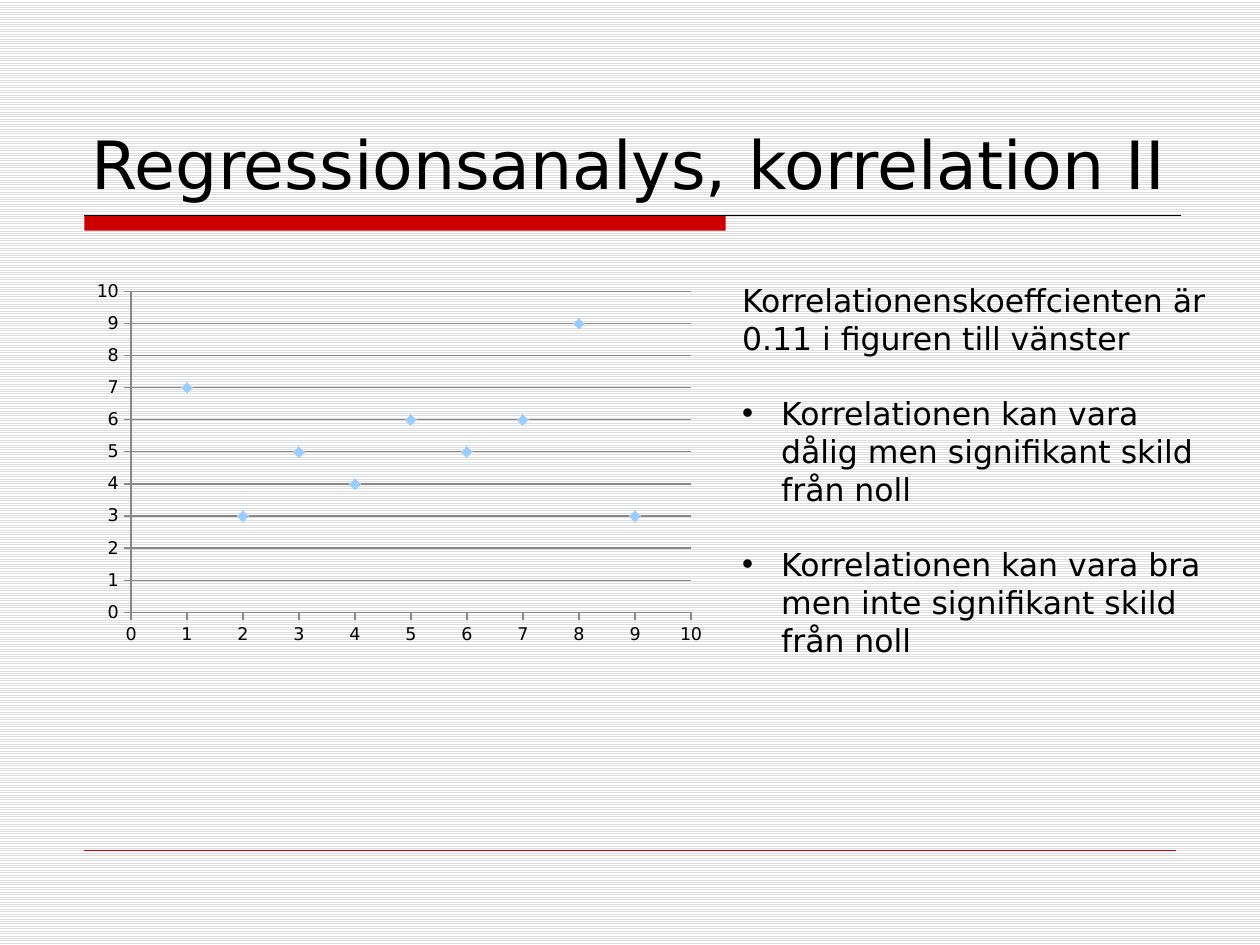
from lxml.etree import SubElement as Sub
from pptx import Presentation
from pptx.chart.data import XyChartData
from pptx.dml.color import RGBColor
from pptx.enum.chart import XL_CHART_TYPE as Kind, XL_MARKER_STYLE as Mark, XL_TICK_MARK as Tick
from pptx.enum.dml import MSO_PATTERN as Pat
from pptx.enum.shapes import MSO_CONNECTOR as Conn, MSO_SHAPE as Form
from pptx.enum.text import MSO_ANCHOR as Anchor
from pptx.oxml.ns import qn
from pptx.util import Cm, Pt

FONT = "DejaVu Sans"
RED = "CC0000"
BLACK = "000000"
GREY = "878787"
SPOTS = [7, 3, 5, 4, 6, 5, 6, 9, 3]
INTRO = "Korrelationenskoeffcienten är 0.11 i figuren till vänster"
POINTS = [
    "Korrelationen kan vara dålig men signifikant skild från noll",
    "Korrelationen kan vara bra men inte signifikant skild från noll",
]
AXIS = {
    "minimum_scale": 0,
    "maximum_scale": 10,
    "major_unit": 1,
    "major_tick_mark": Tick.OUTSIDE,
    "minor_tick_mark": Tick.NONE,
}
PLOT = {"xMode": "edge", "yMode": "edge", "x": 0.074, "y": 0.044, "w": 0.889, "h": 0.849}


def tint(code):
    """Turn a hex string into a colour."""
    return RGBColor.from_string(code)


def apply(item, form):
    """Set every attribute in a dict of format values."""
    for key, val in form.items():
        setattr(item, key, val)


def style(font, size):
    """Give a font the slide's face and colour."""
    apply(font, {"name": FONT, "size": Pt(size)})
    font.color.rgb = tint(BLACK)


def back(slide):
    """Fill the slide with thin horizontal stripes."""
    fill = slide.background.fill
    fill.patterned()
    fill.pattern = Pat.LIGHT_HORIZONTAL
    fill.fore_color.rgb = tint("DDDDDD")
    fill.back_color.rgb = tint("FFFFFF")


def rule(slide, left, top, width, code, weight):
    """Draw a level line."""
    line = slide.shapes.add_connector(Conn.STRAIGHT, Cm(left), Cm(top), Cm(left + width), Cm(top))
    line.line.color.rgb = tint(code)
    line.line.width = Pt(weight)
    Sub(line._element.spPr, qn("a:effectLst"))


def band(slide, left, top, width):
    """Draw the line under the title with its red bar."""
    bar = slide.shapes.add_shape(Form.RECTANGLE, Cm(left), Cm(top), Cm(width * 0.585), Cm(0.31))
    bar.shadow.inherit = False
    bar.fill.solid()
    bar.fill.fore_color.rgb = tint(RED)
    bar.line.fill.background()
    rule(slide, left, top, width, BLACK, 0.75)


def frame(slide, left, top, width, height, anchor):
    """Add a wrapping text box and return its text frame."""
    box = slide.shapes.add_textbox(Cm(left), Cm(top), Cm(width), Cm(height))
    apply(box.text_frame, {"word_wrap": True, "vertical_anchor": anchor})
    return box.text_frame


def title(slide, left, top, width, height):
    """Write the heading at the foot of its box."""
    para = frame(slide, left, top, width, height, Anchor.BOTTOM).paragraphs[0]
    para.text = "Regressionsanalys, korrelation II"
    style(para.runs[0].font, 38)


def notes(slide, left, top, width, height):
    """Write the introduction and its bullet points."""
    text = frame(slide, left, top, width, height, Anchor.TOP)
    for num, words in enumerate([INTRO, *POINTS]):
        para = text.add_paragraph() if num else text.paragraphs[0]
        para.text = words
        style(para.runs[0].font, 18)
        if num:
            para.space_before = Pt(21.5)
            props = para._p.get_or_add_pPr()
            props.set("marL", str(Cm(0.79)))
            props.set("indent", str(-Cm(0.79)))
            Sub(props, qn("a:buFont"), typeface="Arial")
            Sub(props, qn("a:buChar"), char="•")


def scatter(slide, left, top, width, height):
    """Plot the nine points on two equal axes."""
    data = XyChartData()
    row = data.add_series("Series 1")
    for x, y in enumerate(SPOTS, 1):
        row.add_data_point(x, y)
    chart = slide.shapes.add_chart(
        Kind.XY_SCATTER, Cm(left), Cm(top), Cm(width), Cm(height), data
    ).chart
    apply(chart, {"has_legend": False, "has_title": False})
    style(chart.font, 10)
    for axis in (chart.category_axis, chart.value_axis):
        apply(axis, AXIS)
        axis.format.line.color.rgb = tint(GREY)
    chart.category_axis.has_major_gridlines = False
    chart.value_axis.has_major_gridlines = True
    chart.value_axis.major_gridlines.format.line.color.rgb = tint(GREY)
    plot = chart.plots[0]
    plot.vary_by_categories = False
    dots = plot.series[0]
    dots.smooth = False
    dots.format.line.fill.background()
    apply(dots.marker, {"style": Mark.DIAMOND, "size": 6})
    dots.marker.format.fill.solid()
    dots.marker.format.fill.fore_color.rgb = tint("99CCFF")
    dots.marker.format.line.fill.background()
    area = chart._chartSpace.chart.plotArea
    for old in area.findall(qn("c:layout")):
        area.remove(old)
    lay = area.makeelement(qn("c:layout"))
    area.insert(0, lay)
    inner = Sub(lay, qn("c:manualLayout"))
    Sub(inner, qn("c:layoutTarget"), val="inner")
    for key, val in PLOT.items():
        Sub(inner, qn(f"c:{key}"), val=str(val))


def main():
    """Build the slide and save it."""
    deck = Presentation()
    apply(deck, {"slide_width": Cm(25.4), "slide_height": Cm(19.05)})
    slide = deck.slides.add_slide(deck.slide_layouts[6])
    back(slide)
    band(slide, 1.7, 4.34, 22.1)
    rule(slide, 1.7, 17.14, 22, RED, 0.25)
    title(slide, 1.6, 0.84, 22.22, 3.38)
    scatter(slide, 1.7, 5.54, 12.7, 7.62)
    notes(slide, 14.71, 5.54, 10.01, 7.95)
    deck.save("out.pptx")


if __name__ == "__main__":
    main()
